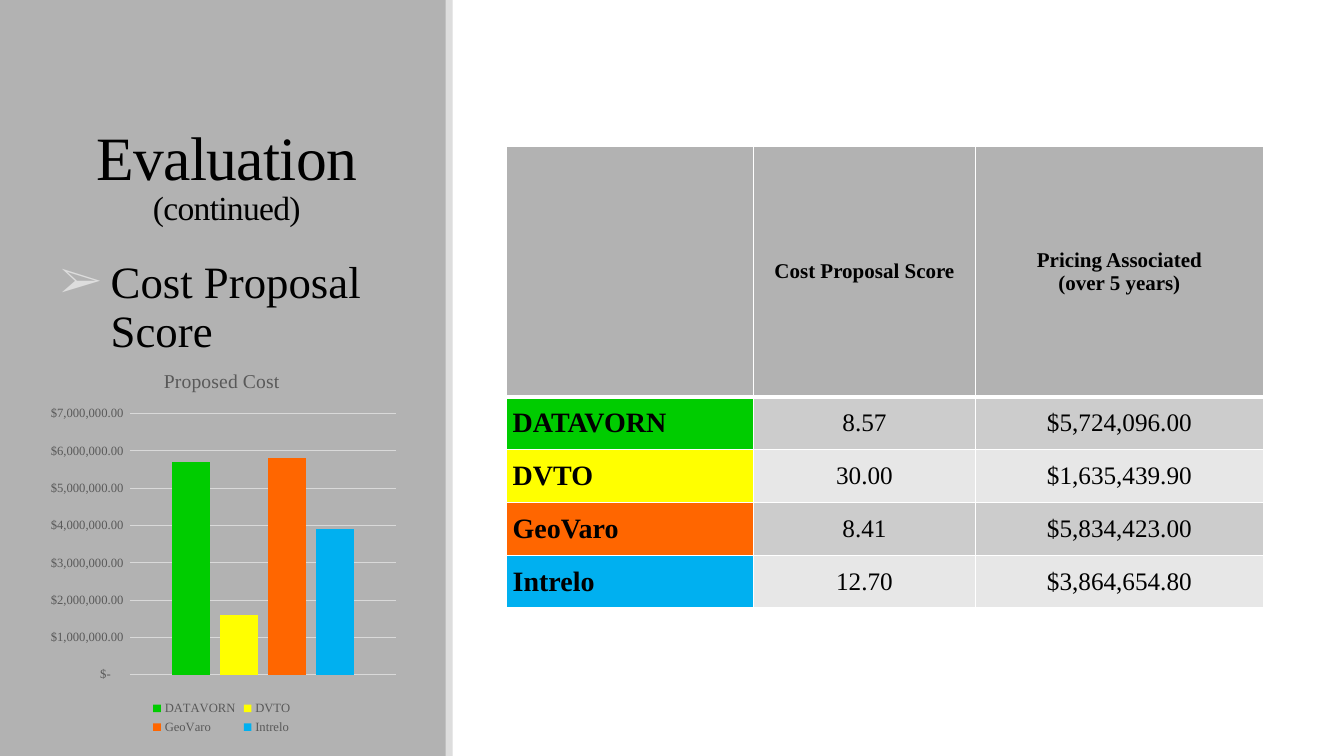
from dataclasses import dataclass

import pptx
import pptx.chart.data
import pptx.dml.color
import pptx.enum.chart
import pptx.enum.shapes
import pptx.enum.text
import pptx.oxml
import pptx.oxml.ns
import pptx.util
from pptx.util import Cm, Pt


@dataclass(frozen=True)
class Theme:
    """Colours, font and type sizes of the slide."""
    font: str = "Times New Roman"
    ink: str = "000000"
    paper: str = "FFFFFF"
    panel: str = "B2B2B2"
    edge: str = "DDDDDD"
    grid: str = "D9D9D9"
    chart_text: str = "595959"
    bands: tuple = ("CCCCCC", "E7E7E7")
    title: float = 44
    subtitle: float = 24
    bullet: float = 32
    header: float = 15
    vendor: float = 20
    figure: float = 18
    chart_title: float = 14
    chart_label: float = 9


THEME = Theme()
VENDORS = [
    ("DATAVORN", 8.57, 5724096.00, "00CC00"),
    ("DVTO", 30.00, 1635439.90, "FFFF00"),
    ("GeoVaro", 8.41, 5834423.00, "FF6600"),
    ("Intrelo", 12.70, 3864654.80, "00B0F0"),
]
HEADERS = [[], ["Cost Proposal Score"], ["Pricing Associated", "(over 5 years)"]]
COLUMN_WIDTHS = [6.23, 5.59, 7.26]
HEADER_HEIGHT, ROW_HEIGHT = 6.3, 1.33
DOLLARS = (r'_([$$-409]* #,##0.00_);_([$$-409]* \(#,##0.00\);'
           r'_([$$-409]* "-"??_);_(@_)')
CENTER = pptx.enum.text.PP_ALIGN.CENTER
LEFT = pptx.enum.text.PP_ALIGN.LEFT


def paint(fill, color):
    """Make a fill solid in the given colour."""
    fill.solid()
    fill.fore_color.rgb = pptx.dml.color.RGBColor.from_string(color)


def style_font(font, size, color=THEME.ink, bold=False):
    """Set typeface, size, colour and weight."""
    font.name, font.size, font.bold = THEME.font, Pt(size), bold
    font.color.rgb = pptx.dml.color.RGBColor.from_string(color)


def add_span(para, text, size, color=THEME.ink, bold=False):
    """Append one styled run to a paragraph and return it."""
    span = para.add_run()
    span.text = text
    style_font(span.font, size, color, bold)
    return span


def add_band(page, left, width, color):
    """Add a full-height rectangle without an outline."""
    band = page.shapes.add_shape(pptx.enum.shapes.MSO_SHAPE.RECTANGLE,
                                 Cm(left), Cm(0), Cm(width), Cm(19.05))
    band.shadow.inherit = False
    paint(band.fill, color)
    band.line.fill.background()


def add_box(page, left, top, width, height, anchor):
    """Add a wrapping text box and return its first paragraph."""
    box = page.shapes.add_textbox(Cm(left), Cm(top), Cm(width), Cm(height))
    box.text_frame.word_wrap = True
    box.text_frame.vertical_anchor = anchor
    return box.text_frame.paragraphs[0]


def add_title(page):
    """Add the two-line heading with tightened letters."""
    para = add_box(page, 1.27, 1.63, 8.89, 4.22, pptx.enum.text.MSO_ANCHOR.BOTTOM)
    para.alignment, para.line_spacing = CENTER, 0.85
    heading = add_span(para, "Evaluation", THEME.title)
    para.add_line_break()
    for span in (heading, add_span(para, "(continued)", THEME.subtitle)):
        span.font._element.set("spc", "-50")


def add_bullet(page):
    """Add the arrow-bulleted topic line."""
    para = add_box(page, 1.27, 6.43, 8.89, 11.1, pptx.enum.text.MSO_ANCHOR.TOP)
    para.line_spacing, para.space_before, para.space_after = 0.9, Pt(12), Pt(2)
    add_span(para, "Cost Proposal Score", THEME.bullet)
    properties = para._p.get_or_add_pPr()
    properties.set("marL", str(Cm(1.27)))
    properties.set("indent", str(-Cm(1.27)))
    namespace = pptx.oxml.ns.nsdecls("a")
    for markup in (f'<a:buClr {namespace}><a:srgbClr val="{THEME.edge}"/></a:buClr>',
                   f'<a:buFont {namespace} typeface="{THEME.font}"/>',
                   f'<a:buChar {namespace} char="➢"/>'):
        properties.append(pptx.oxml.parse_xml(markup))


def border_cell(cell, top, bottom):
    """Draw white borders around a cell, with top and bottom widths in points."""
    properties = cell._tc.get_or_add_tcPr()
    sides = [("L", 1), ("R", 1), ("T", top), ("B", bottom)]
    for place, (side, width) in enumerate(sides):
        properties.insert(place, pptx.oxml.parse_xml(
            f'<a:ln{side} {pptx.oxml.ns.nsdecls("a")} w="{Pt(width)}"><a:solidFill>'
            f'<a:srgbClr val="{THEME.paper}"/></a:solidFill></a:ln{side}>'))


def fill_cell(cell, lines, size, fill, bold=False, align=CENTER, inset=0.03):
    """Write the lines of a table cell and set its fill and margins."""
    cell.vertical_anchor = pptx.enum.text.MSO_ANCHOR.MIDDLE
    cell.margin_left = cell.margin_right = Cm(inset)
    cell.margin_top = cell.margin_bottom = Cm(0)
    paint(cell.fill, fill)
    for index, line in enumerate(lines):
        frame = cell.text_frame
        para = frame.add_paragraph() if index else frame.paragraphs[0]
        para.alignment = align
        add_span(para, line, size, bold=bold)


def add_scores(page):
    """Add the table of scores and prices by vendor."""
    height = HEADER_HEIGHT + ROW_HEIGHT * len(VENDORS)
    table = page.shapes.add_table(len(VENDORS) + 1, len(HEADERS), Cm(12.76), Cm(3.7),
                                  Cm(sum(COLUMN_WIDTHS)), Cm(height)).table
    for column, width in zip(table.columns, COLUMN_WIDTHS):
        column.width = Cm(width)
    for index, row in enumerate(table.rows):
        row.height = Cm(ROW_HEIGHT if index else HEADER_HEIGHT)
    for index, lines in enumerate(HEADERS):
        fill_cell(table.cell(0, index), lines, THEME.header, THEME.panel, True,
                  inset=0.16)
    for index, (name, score, price, color) in enumerate(VENDORS):
        row = index + 1
        fill_cell(table.cell(row, 0), [name], THEME.vendor, color, True, LEFT, 0.16)
        for column, text in enumerate((f"{score:.2f}", f" ${price:,.2f} "), 1):
            fill_cell(table.cell(row, column), [text], THEME.figure,
                      THEME.bands[index % 2])
    for index, row in enumerate(table.rows):
        for cell in row.cells:
            border_cell(cell, 3 if index == 1 else 1, 3 if index == 0 else 1)


def add_cost_chart(page):
    """Add the column chart of proposed costs, rounded to 100,000 dollars."""
    data = pptx.chart.data.CategoryChartData(number_format=DOLLARS)
    data.categories = ["1"]
    for name, _, price, _ in VENDORS:
        data.add_series(name, [round(price, -5)])
    chart = page.shapes.add_chart(
        pptx.enum.chart.XL_CHART_TYPE.COLUMN_CLUSTERED,
        Cm(1.02), Cm(8.86), Cm(9.14), Cm(9.75), data).chart
    style_font(chart.font, THEME.chart_label, THEME.chart_text)
    chart.has_title = True
    add_span(chart.chart_title.text_frame.paragraphs[0], "Proposed Cost",
             THEME.chart_title, THEME.chart_text)
    chart.chart_title.include_in_layout = False
    chart.has_legend = True
    chart.legend.position = pptx.enum.chart.XL_LEGEND_POSITION.BOTTOM
    chart.legend.include_in_layout = False
    style_font(chart.legend.font, THEME.chart_label, THEME.chart_text)
    plot = chart.plots[0]
    plot.vary_by_categories, plot.gap_width, plot.overlap = False, 219, -27
    for series, vendor in zip(plot.series, VENDORS):
        paint(series.format.fill, vendor[3])
    chart.category_axis.visible = False
    axis = chart.value_axis
    axis.minimum_scale, axis.maximum_scale, axis.major_unit = 0, 7000000, 1000000
    axis.major_tick_mark = pptx.enum.chart.XL_TICK_MARK.NONE
    axis.format.line.fill.background()
    axis.major_gridlines.format.line.width = Pt(0.75)
    paint(axis.major_gridlines.format.line.fill, THEME.grid)
    axis.tick_labels.number_format = DOLLARS
    axis.tick_labels.number_format_is_linked = False
    style_font(axis.tick_labels.font, THEME.chart_label, THEME.chart_text)


def main():
    """Build the slide and save the deck."""
    deck = pptx.Presentation()
    deck.slide_width, deck.slide_height = Cm(33.87), Cm(19.05)
    page = deck.slides.add_slide(deck.slide_layouts[6])
    paint(page.background.fill, THEME.paper)
    add_band(page, 0, 11.25, THEME.panel)
    add_band(page, 11.23, 0.18, THEME.edge)
    add_title(page)
    add_scores(page)
    add_bullet(page)
    add_cost_chart(page)
    deck.save("out.pptx")


if __name__ == "__main__":
    main()
